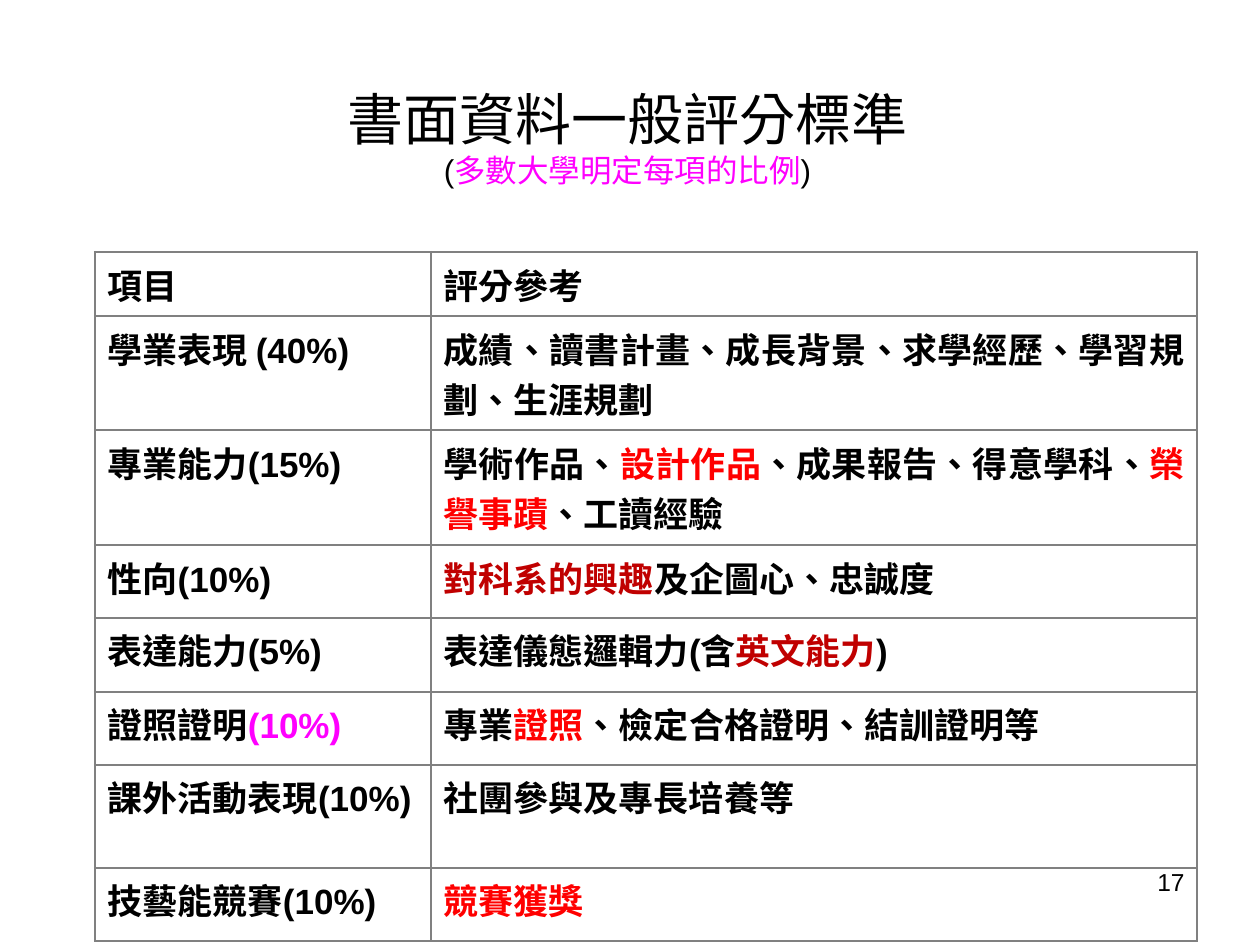
from lxml.etree import SubElement
from pptx import Presentation
from pptx.dml.color import RGBColor
from pptx.enum.lang import MSO_LANGUAGE_ID as Lang
from pptx.enum.text import MSO_ANCHOR, MSO_AUTO_SIZE, PP_ALIGN as Align
from pptx.oxml.ns import qn
from pptx.util import Pt

PX = 914400 / 126
BLACK, GRAY, RED, DARK_RED, MAGENTA = "000000", "808080", "FF0000", "C00000", "FF00FF"

# A run is a plain string (black) or a (text, colour) pair.
CRITERIA = [
    (["項目"], ["評分參考"]),
    (["學業表現 (40%)"], ["成績、讀書計畫、成長背景、求學經歷、學習規劃、生涯規劃"]),
    (["專業能力(15%)"], ["學術作品、", ("設計作品", RED), "、成果報告、得意學科、",
                     ("榮譽事蹟", RED), "、工讀經驗"]),
    (["性向(10%)"], [("對科系的興趣", DARK_RED), "及企圖心、忠誠度"]),
    (["表達能力(5%)"], ["表達儀態邏輯力(含", ("英文能力", DARK_RED), ")"]),
    (["證照證明", ("(10%)", MAGENTA)],
     ["專業", ("證照", RED), "、檢定合格證明、結訓證明等"]),
    (["課外活動表現(10%)"], ["社團參與及專長培養等"]),
    (["技藝能競賽(10%)"], [("競賽獲獎", RED)]),
]
COLUMN_WIDTHS = [336, 766]
ROW_HEIGHTS = [64, 114, 115, 73, 74, 73, 103, 73]


def px(n):
    return round(n * PX)


def rgb(hex_text):
    return RGBColor.from_string(hex_text)


class Deck:
    font = "Arial"

    def __init__(self, width, height):
        self.prs = Presentation()
        self.prs.slide_width, self.prs.slide_height = px(width), px(height)
        self.s = self.prs.slides.add_slide(self.prs.slide_layouts[6])

    def fill_paragraph(self, p, runs, size, align, bold=False):
        p.alignment = align
        for run in runs:
            text, color = (run, BLACK) if isinstance(run, str) else run
            r = p.add_run()
            r.text = text
            style = {"name": self.font, "size": Pt(size), "bold": bold,
                     "language_id": Lang.TRADITIONAL_CHINESE}
            for key, value in style.items():
                setattr(r.font, key, value)
            r.font.color.rgb = rgb(color)

    def text(self, box, paragraphs, align, wrap=True):
        """Add a text box; paragraphs are (runs, size) pairs."""
        tf = self.s.shapes.add_textbox(*map(px, box)).text_frame
        tf.word_wrap = wrap
        if not wrap:
            tf.auto_size = MSO_AUTO_SIZE.SHAPE_TO_FIT_TEXT
        for i, (runs, size) in enumerate(paragraphs):
            p = tf.add_paragraph() if i else tf.paragraphs[0]
            self.fill_paragraph(p, runs, size, align)

    def border(self, cell, color, width):
        tcPr = cell._tc.get_or_add_tcPr()
        for side in ("a:lnL", "a:lnR", "a:lnT", "a:lnB"):
            ln = SubElement(tcPr, qn(side), w=str(Pt(width)))
            SubElement(SubElement(ln, qn("a:solidFill")), qn("a:srgbClr"), val=color)

    def space_before(self, p, percent):
        """Set the space before as a share of the line, which python-pptx lacks."""
        spacing = SubElement(p._p.get_or_add_pPr(), qn("a:spcBef"))
        SubElement(spacing, qn("a:spcPct"), val=str(percent * 1000))

    def table(self, left, top, widths, heights, rows, size):
        frame = self.s.shapes.add_table(len(heights), len(widths), px(left), px(top),
                                        px(sum(widths)), px(sum(heights)))
        table = frame.table
        table.first_row = table.horz_banding = False
        for column, width in zip(table.columns, widths):
            column.width = px(width)
        for row, height, contents in zip(table.rows, heights, rows):
            row.height = px(height)
            for cell, runs in zip(row.cells, contents):
                self.border(cell, GRAY, 1.5)
                cell.fill.background()
                cell.vertical_anchor = MSO_ANCHOR.TOP
                p = cell.text_frame.paragraphs[0]
                self.space_before(p, 20)
                self.fill_paragraph(p, runs, size, Align.JUSTIFY, bold=True)


def main():
    deck = Deck(1260, 945)
    deck.text((903, 861, 294, 66), [(["17"], 14)], Align.RIGHT)
    deck.table(95, 252, COLUMN_WIDTHS, ROW_HEIGHTS, CRITERIA, 20)
    subtitle = ["(", ("多數大學明定每項的比例", MAGENTA), ")"]
    deck.text((332, 78, 591, 118), [(["書面資料一般評分標準"], 32), (subtitle, 18)],
              Align.CENTER, wrap=False)
    deck.prs.save("out.pptx")


if __name__ == "__main__":
    main()
